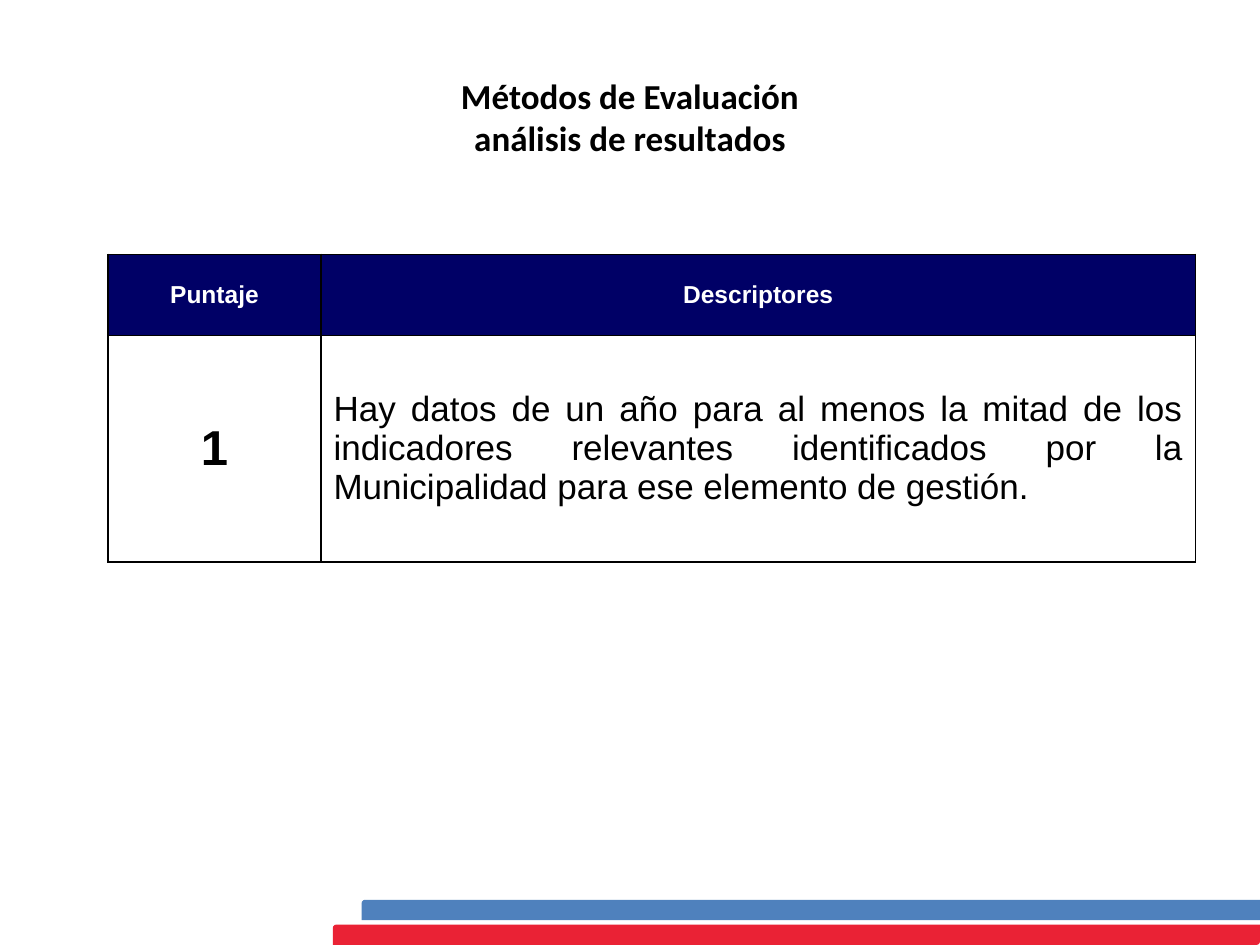
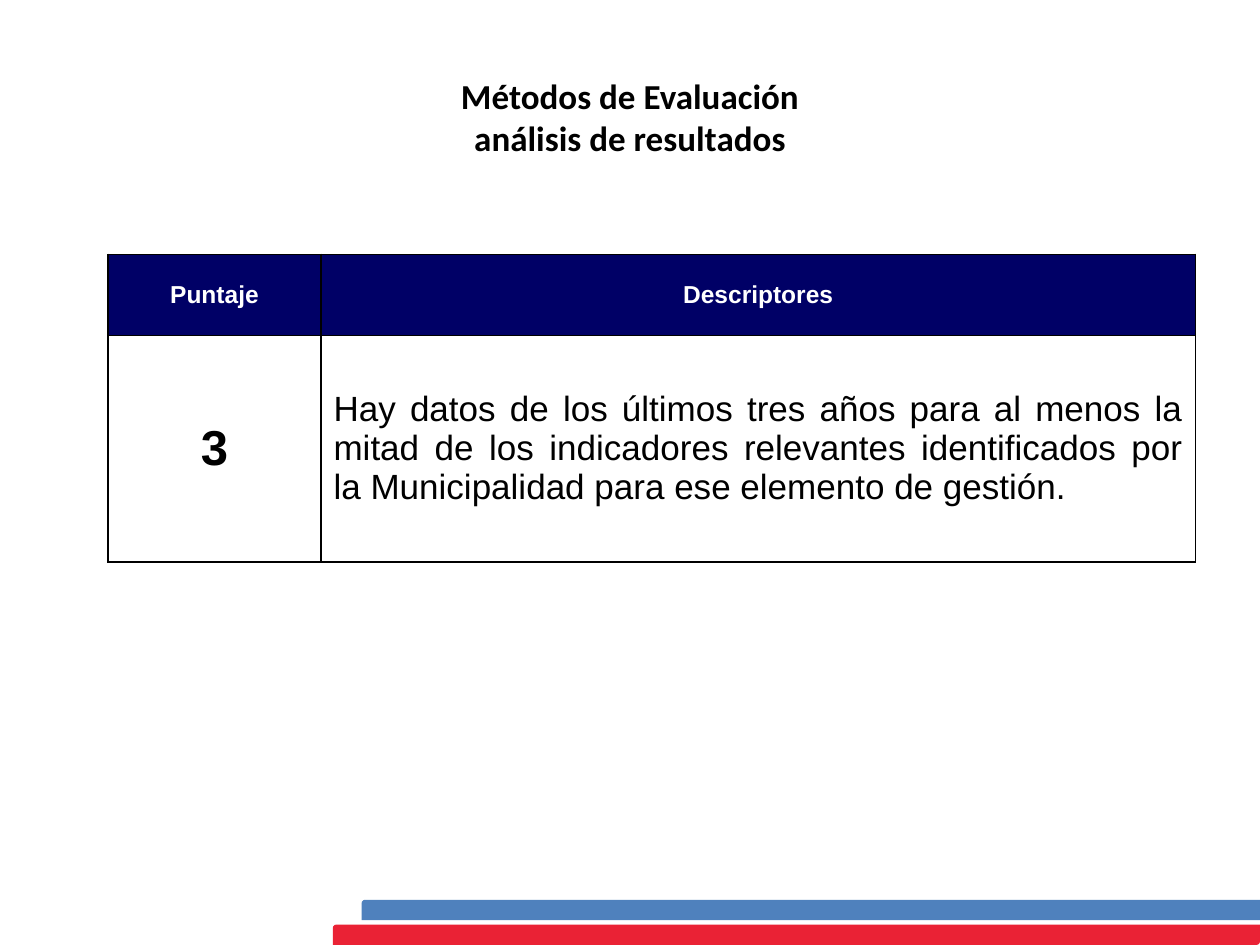
from dataclasses import dataclass

from lxml.etree import SubElement
from pptx import Presentation
from pptx.dml.color import RGBColor
from pptx.enum.shapes import MSO_SHAPE
from pptx.enum.text import MSO_ANCHOR, PP_ALIGN
from pptx.oxml.ns import qn
from pptx.slide import Slide
from pptx.table import _Cell
from pptx.text.text import TextFrame
from pptx.util import Cm, Pt

BLACK = RGBColor(0x00, 0x00, 0x00)
WHITE = RGBColor(0xFF, 0xFF, 0xFF)
NAVY = RGBColor(0x00, 0x00, 0x66)
BLUE = RGBColor(0x4F, 0x81, 0xBD)
RED = RGBColor(0xEA, 0x22, 0x35)

TITLE = "Métodos de Evaluación\vanálisis de resultados"
HEADERS = ("Puntaje", "Descriptores")
COLUMN_WIDTHS = (Cm(4.29), Cm(17.63))
ROW_HEIGHTS = (Cm(1.63), Cm(4.57))


@dataclass(frozen=True)
class Band:
    """A coloured strip at the foot of every slide."""

    left: Cm
    top: Cm
    color: RGBColor


@dataclass(frozen=True)
class TextStyle:
    """The look of one block of text."""

    size: int
    color: RGBColor = BLACK
    bold: bool = True
    alignment: PP_ALIGN = PP_ALIGN.CENTER
    font: str = "Arial"


@dataclass(frozen=True)
class Score:
    """A score and the descriptor that explains it."""

    points: str
    descriptor: str


BANDS = (
    Band(Cm(7.29), Cm(18.14), BLUE),
    Band(Cm(6.71), Cm(18.64), RED),
)
TITLE_STYLE = TextStyle(20, font="Calibri")
HEADER_STYLE = TextStyle(14, WHITE)
POINTS_STYLE = TextStyle(28)
DESCRIPTOR_STYLE = TextStyle(20, bold=False, alignment=PP_ALIGN.JUSTIFY)

SCORES = (
    Score("1", "Hay datos de un año para al menos la mitad de los indicadores relevantes "
               "identificados por la Municipalidad para ese elemento de gestión."),
    Score("3", "Hay datos de los últimos tres años para al menos la mitad de los indicadores "
               "relevantes identificados por la Municipalidad para ese elemento de gestión."),
)


def write_text(text_frame: TextFrame, text: str, style: TextStyle) -> None:
    """Fill a text frame and format its runs."""
    text_frame.text = text
    for paragraph in text_frame.paragraphs:
        paragraph.alignment = style.alignment
        for run in paragraph.runs:
            run.font.name = style.font
            run.font.size = Pt(style.size)
            run.font.bold = style.bold
            run.font.color.rgb = style.color


def add_band(slide: Slide, band: Band) -> None:
    """Draw one foot band."""
    shape = slide.shapes.add_shape(
        MSO_SHAPE.ROUND_2_DIAG_RECTANGLE, band.left, band.top, Cm(18.69), Cm(0.41)
    )
    shape.shadow.inherit = False
    shape.fill.solid()
    shape.fill.fore_color.rgb = band.color
    shape.line.fill.background()


def add_title(slide: Slide) -> None:
    """Place and write the slide title."""
    title = slide.shapes.title
    title.left, title.top, title.width, title.height = Cm(1.27), Cm(0.76), Cm(22.86), Cm(3.18)
    title.text_frame.vertical_anchor = MSO_ANCHOR.MIDDLE
    write_text(title.text_frame, TITLE, TITLE_STYLE)


def add_borders(cell: _Cell, bottom_width: float) -> None:
    """Give a cell black borders on its four sides."""
    properties = cell._tc.get_or_add_tcPr()
    widths = {"a:lnL": 1, "a:lnR": 1, "a:lnT": 1, "a:lnB": bottom_width}
    for tag, width in widths.items():
        line = SubElement(properties, qn(tag), w=str(Pt(width)))
        fill = SubElement(line, qn("a:solidFill"))
        SubElement(fill, qn("a:srgbClr"), val=str(BLACK))


def format_cell(cell: _Cell, text: str, style: TextStyle, is_header: bool) -> None:
    """Write a cell and set its borders and fill."""
    write_text(cell.text_frame, text, style)
    cell.vertical_anchor = MSO_ANCHOR.MIDDLE
    add_borders(cell, 0.75 if style is DESCRIPTOR_STYLE else 1)
    if is_header:
        cell.fill.solid()
        cell.fill.fore_color.rgb = NAVY
    else:
        cell.fill.background()


def add_score_table(slide: Slide, score: Score) -> None:
    """Draw the table with one score and its descriptor."""
    table = slide.shapes.add_table(
        2, 2, Cm(2.18), Cm(5.13), sum(COLUMN_WIDTHS), sum(ROW_HEIGHTS)
    ).table
    table.horz_banding = False
    for column, width in zip(table.columns, COLUMN_WIDTHS):
        column.width = width
    for row, height in zip(table.rows, ROW_HEIGHTS):
        row.height = height
    body = ((score.points, POINTS_STYLE), (score.descriptor, DESCRIPTOR_STYLE))
    for index, (header, (text, style)) in enumerate(zip(HEADERS, body)):
        format_cell(table.cell(0, index), header, HEADER_STYLE, True)
        format_cell(table.cell(1, index), text, style, False)


def main() -> None:
    """Build and save the presentation."""
    presentation = Presentation()
    presentation.slide_width, presentation.slide_height = Cm(25.4), Cm(19.05)
    title_only = presentation.slide_layouts.get_by_name("Title Only")
    for score in SCORES:
        slide = presentation.slides.add_slide(title_only)
        for band in BANDS:
            add_band(slide, band)
        add_title(slide)
        add_score_table(slide, score)
    presentation.save("out.pptx")


if __name__ == "__main__":
    main()
